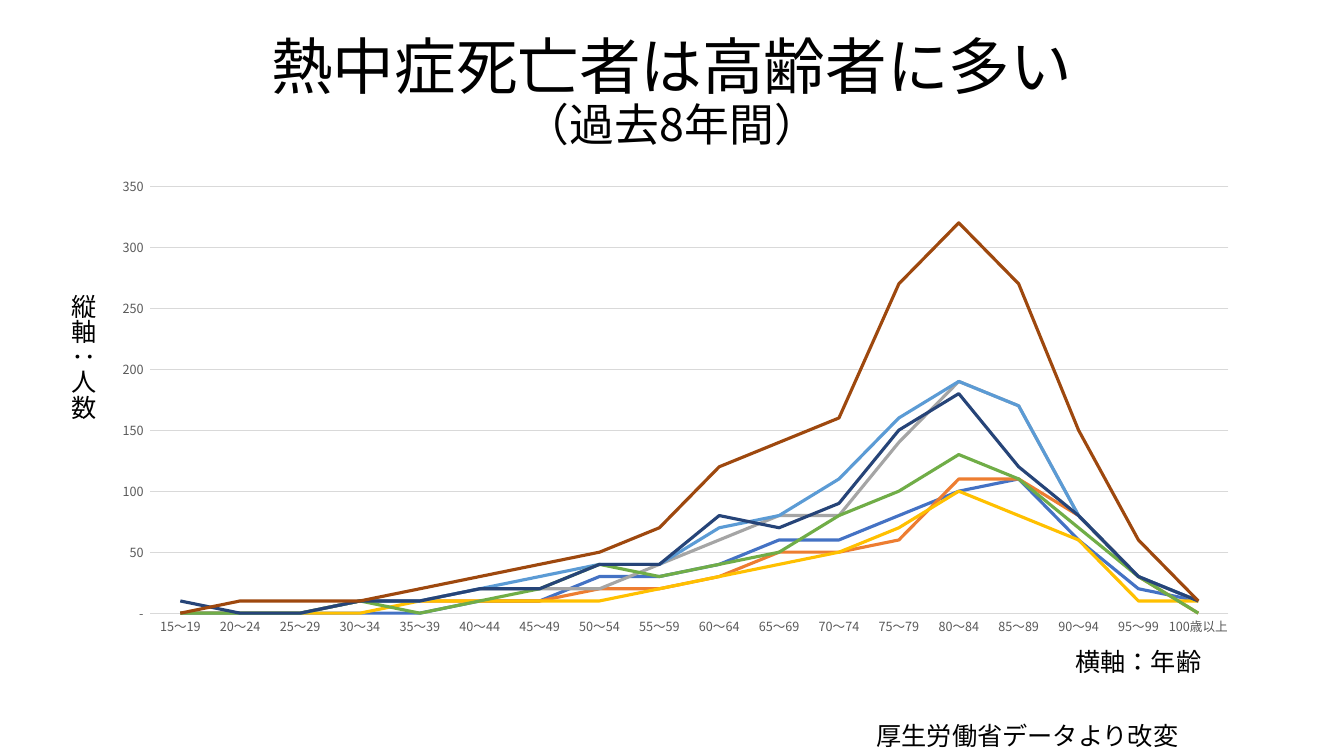
from lxml import etree
from pptx import Presentation
from pptx import util as u
from pptx.chart.data import CategoryChartData
from pptx.dml.color import RGBColor
from pptx.enum import chart as charts, lang, text
from pptx.oxml import parse_xml
from pptx.oxml.ns import nsdecls, qn

FONT = "Noto Sans CJK JP"
AGES = [f"{age}～{age + 4}" for age in range(15, 100, 5)] + ["100歳以上"]
DEATHS = [
    ("4472C4", [0, 0, 0, 0, 0, 10, 10, 30, 30, 40, 60, 60, 80, 100, 110, 60, 20, 10]),
    ("ED7D31", [0, 0, 0, 10, 10, 10, 10, 20, 20, 30, 50, 50, 60, 110, 110, 80, 30, 0]),
    ("A5A5A5", [0, 0, 0, 10, 10, 20, 20, 20, 40, 60, 80, 80, 140, 190, 170, 80, 30, 10]),
    ("FFC000", [0, 0, 0, 0, 10, 10, 10, 10, 20, 30, 40, 50, 70, 100, 80, 60, 10, 10]),
    ("5B9BD5", [0, 0, 0, 10, 10, 20, 30, 40, 40, 70, 80, 110, 160, 190, 170, 80, 30, 10]),
    ("70AD47", [0, 0, 0, 10, 0, 10, 20, 40, 30, 40, 50, 80, 100, 130, 110, 70, 30, 0]),
    ("264478", [10, 0, 0, 10, 10, 20, 20, 40, 40, 80, 70, 90, 150, 180, 120, 80, 30, 10]),
    ("9E480E", [0, 10, 10, 10, 20, 30, 40, 50, 70, 120, 140, 160, 270, 320, 270, 150, 60, 10]),
]


def color(value):
    return RGBColor.from_string(value)


def format_font(font, size, fill):
    font.name = FONT
    font.size = u.Pt(size)
    font.color.rgb = color(fill)


def write(paragraph, content, size=18, fill="000000"):
    run = paragraph.add_run()
    run.text = content
    format_font(run.font, size, fill)
    run.font.language_id = lang.MSO_LANGUAGE_ID.JAPANESE
    east_asian = etree.SubElement(run.font._element, qn("a:ea"))
    east_asian.set("typeface", FONT)


def draw_line(line, fill, width=0.75):
    line.color.rgb = color(fill)
    line.width = u.Pt(width)


def place(shape, left, top, width, height):
    shape.left, shape.top, shape.width, shape.height = map(
        u.Cm, (left, top, width, height))


def add_title(slide, box):
    title = slide.shapes.title
    place(title, *box)
    frame = title.text_frame
    frame.auto_size = text.MSO_AUTO_SIZE.NONE
    frame.vertical_anchor = text.MSO_ANCHOR.MIDDLE
    paragraph = frame.paragraphs[0]
    paragraph.alignment = text.PP_ALIGN.CENTER
    paragraph.line_spacing = 0.9
    write(paragraph, "熱中症死亡者は高齢者に多い", size=44)
    paragraph.add_line_break()
    write(paragraph, "（過去8年間）", size=32)


def add_label(slide, content, box, vertical=False):
    label = slide.shapes.add_textbox(*map(u.Cm, box))
    frame = label.text_frame
    frame.word_wrap = True
    frame.auto_size = text.MSO_AUTO_SIZE.SHAPE_TO_FIT_TEXT
    if vertical:
        frame._txBody.bodyPr.set("vert", "eaVert")
    write(frame.paragraphs[0], content)


def fix_plot_area(chart, left, top, width, height):
    plot_area = chart._chartSpace.chart.plotArea
    for layout in plot_area.findall(qn("c:layout")):
        plot_area.remove(layout)
    plot_area.insert(0, parse_xml(
        f'<c:layout {nsdecls("c")}><c:manualLayout><c:layoutTarget val="inner"/>'
        '<c:xMode val="edge"/><c:yMode val="edge"/>'
        f'<c:x val="{left}"/><c:y val="{top}"/><c:w val="{width}"/><c:h val="{height}"/>'
        '</c:manualLayout></c:layout>'))


def add_deaths_chart(slide, box):
    data = CategoryChartData()
    data.categories = AGES
    for number, (_, values) in enumerate(DEATHS, 1):
        data.add_series(f"Series {number}", values)
    chart = slide.shapes.add_chart(
        charts.XL_CHART_TYPE.LINE, *map(u.Cm, box), data).chart
    chart.has_legend = False
    chart.has_title = False
    format_font(chart.font, 10, "000000")
    fix_plot_area(chart, 0.05, 0.04, 0.93, 0.89)

    for axis in (chart.category_axis, chart.value_axis):
        axis.major_tick_mark = axis.minor_tick_mark = charts.XL_TICK_MARK.NONE
        format_font(axis.tick_labels.font, 9, "595959")
    draw_line(chart.category_axis.format.line, "D9D9D9")

    people = chart.value_axis
    people.minimum_scale, people.maximum_scale, people.major_unit = 0, 350, 50
    people.format.line.fill.background()
    people.has_major_gridlines = True
    draw_line(people.major_gridlines.format.line, "D9D9D9")
    people.tick_labels.number_format = '#,##0_ ;-#,##0_ ;"-"_ '
    people.tick_labels.number_format_is_linked = False

    plot = chart.plots[0]
    plot.vary_by_categories = False
    for series, (fill, _) in zip(plot.series, DEATHS):
        series.smooth = False
        series.marker.style = charts.XL_MARKER_STYLE.NONE
        draw_line(series.format.line, fill, 2.25)


def main():
    presentation = Presentation()
    presentation.slide_width = u.Cm(33.87)
    presentation.slide_height = u.Cm(19.05)
    slide = presentation.slides.add_slide(presentation.slide_layouts[5])
    add_title(slide, (2.33, 0.53, 29.21, 3.68))
    add_deaths_chart(slide, (2.33, 4.21, 29.21, 12.09))
    add_label(slide, "厚生労働省データより改変", (21.84, 18.03, 8.86, 1.03))
    add_label(slide, "縦軸：人数", (1.32, 7.16, 1.28, 5.38), vertical=True)
    add_label(slide, "横軸：年齢", (26.85, 16.15, 5.51, 1.03))
    presentation.save("out.pptx")


if __name__ == "__main__":
    main()
